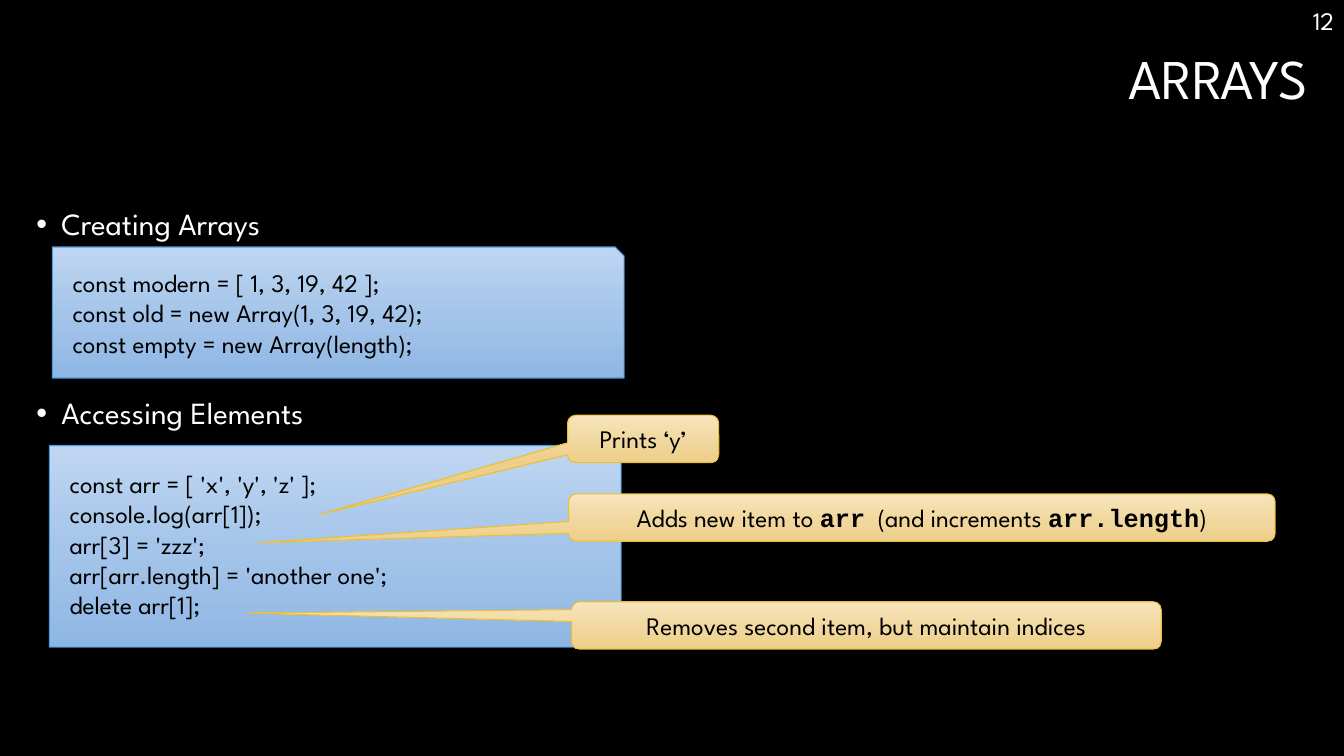
from copy import deepcopy
from typing import NamedTuple

from pptx import Presentation
from pptx.dml.color import RGBColor
from pptx.enum.shapes import MSO_SHAPE
from pptx.enum.text import MSO_ANCHOR, MSO_AUTO_SIZE, PP_ALIGN
from pptx.oxml.ns import qn
from pptx.util import Inches, Pt

SLIDE_WIDTH, SLIDE_HEIGHT = Inches(13.333), Inches(7.5)
TEXT_FONT, CODE_FONT = "League Spartan", "Courier New"

BLACK = RGBColor(0x00, 0x00, 0x00)
WHITE = RGBColor(0xFF, 0xFF, 0xFF)
BLUES = [RGBColor(0xBF, 0xD6, 0xF2), RGBColor(0xA4, 0xC4, 0xE9), RGBColor(0x8F, 0xB7, 0xE4)]
BLUE_LINE = RGBColor(0x4A, 0x9B, 0xDC)
GOLDS = [RGBColor(0xF8, 0xE5, 0xBD), RGBColor(0xF1, 0xD8, 0xA0), RGBColor(0xEE, 0xCF, 0x89)]
GOLD_LINE = RGBColor(0xE9, 0xBF, 0x35)


class Box(NamedTuple):
    """A region, in percent of the slide's width and height."""
    left: float
    top: float
    width: float
    height: float

    def lengths(self):
        return (int(SLIDE_WIDTH * self.left / 100), int(SLIDE_HEIGHT * self.top / 100),
                int(SLIDE_WIDTH * self.width / 100), int(SLIDE_HEIGHT * self.height / 100))


def place(shape, box):
    shape.left, shape.top, shape.width, shape.height = box.lengths()


def add_span(para, text, size, color, font=TEXT_FONT, bold=False):
    span = para.add_run()
    span.text = text
    span.font.name, span.font.size, span.font.bold = font, Pt(size), bold
    span.font.color.rgb = color


def add_panel(page, kind, box, colors, line_color):
    """Outlined shape with a three-step gradient from top to bottom."""
    panel = page.shapes.add_shape(kind, *box.lengths())
    panel.shadow.inherit = False
    panel.fill.gradient()
    panel.fill.gradient_angle = 270
    stop_list = next(panel._element.spPr.iter(qn("a:gsLst")))
    stop_list.insert(1, deepcopy(stop_list[0]))
    for stop, position, color in zip(panel.fill.gradient_stops, (0, 0.52, 1), colors):
        stop.position = position
        stop.color.rgb = color
    panel.line.color.rgb = line_color
    panel.line.width = Pt(0.75)
    panel.text_frame.word_wrap = True
    return panel


def add_title(page, box, text):
    title = page.shapes.title
    place(title, box)
    frame = title.text_frame
    frame.vertical_anchor = MSO_ANCHOR.TOP
    frame.auto_size = MSO_AUTO_SIZE.NONE
    para = frame.paragraphs[0]
    para.alignment, para.line_spacing = PP_ALIGN.RIGHT, 0.9
    add_span(para, text, 40, WHITE)


def add_topics(page, box, topics):
    """Bulleted headings, each with the space above it in points."""
    body = page.placeholders[1]
    place(body, box)
    frame = body.text_frame
    frame.auto_size = MSO_AUTO_SIZE.NONE
    for index, (text, space) in enumerate(topics):
        para = frame.add_paragraph() if index else frame.paragraphs[0]
        para.line_spacing, para.space_before = 0.9, Pt(space)
        properties = para._p.get_or_add_pPr()
        properties.set("marL", str(Inches(0.25)))
        properties.set("indent", str(-Inches(0.25)))
        add_span(para, text, 22, WHITE)


def add_page_number(page, box, number):
    para = page.shapes.add_textbox(*box.lengths()).text_frame.paragraphs[0]
    para._parent.word_wrap = True
    para.alignment = PP_ALIGN.RIGHT
    add_span(para, number, 18, WHITE)


def add_code(page, box, lines):
    panel = add_panel(page, MSO_SHAPE.SNIP_1_RECTANGLE, box, BLUES, BLUE_LINE)
    panel.adjustments[0] = 0.068
    frame = panel.text_frame
    frame.vertical_anchor = MSO_ANCHOR.TOP
    frame.margin_left = frame.margin_right = frame.margin_bottom = Inches(0.2)
    frame.margin_top = Inches(0.16)
    for index, line in enumerate(lines):
        para = frame.add_paragraph() if index else frame.paragraphs[0]
        para.alignment = PP_ALIGN.LEFT
        add_span(para, line, 18, BLACK)


def add_callout(page, box, tip, spans):
    """Note whose wedge ends at tip; spans are (text, is_code) pairs."""
    note = add_panel(page, MSO_SHAPE.ROUNDED_RECTANGULAR_CALLOUT, box, GOLDS, GOLD_LINE)
    note.adjustments[0] = (tip[0] - box.left) / box.width - 0.5
    note.adjustments[1] = (tip[1] - box.top) / box.height - 0.5
    note.adjustments[2] = 0.167
    note.text_frame.vertical_anchor = MSO_ANCHOR.MIDDLE
    para = note.text_frame.paragraphs[0]
    para.alignment = PP_ALIGN.CENTER
    for text, is_code in spans:
        add_span(para, text, 18, BLACK, CODE_FONT if is_code else TEXT_FONT, is_code)


def build_arrays_page(deck):
    page = deck.slides.add_slide(deck.slide_layouts[1])
    page.background.fill.solid()
    page.background.fill.fore_color.rgb = BLACK

    # Headings
    add_topics(page, Box(1.95, 26.93, 96.08, 70.4),
               [("Creating Arrays", 10), ("Accessing Elements", 111.3)])
    add_title(page, Box(1.95, 6.13, 96.08, 18.8), "ARRAYS")
    add_page_number(page, Box(78.4, 0, 21.6, 5.33), "12")

    # Code samples
    add_code(page, Box(3.9, 32.67, 42.53, 17.33), [
        "const modern = [ 1, 3, 19, 42 ];",
        "const old = new Array(1, 3, 19, 42);",
        "const empty = new Array(length);",
    ])
    add_code(page, Box(3.68, 58.93, 42.53, 26.67), [
        "const arr = [ 'x', 'y', 'z' ];",
        "console.log(arr[1]);",
        "arr[3] = 'zzz';",
        "arr[arr.length] = 'another one';",
        "delete arr[1];",
    ])

    # Notes on single lines of code
    add_callout(page, Box(42.23, 54.93, 11.25, 6.27), (23.73, 68.1), [("Prints ‘y’", False)])
    add_callout(page, Box(42.3, 65.33, 52.58, 6.27), (19.22, 71.79), [
        ("Adds new item to ", False), ("arr", True), ("  (and increments ", False),
        ("arr.length", True), (")", False),
    ])
    add_callout(page, Box(42.53, 79.6, 43.88, 6.27), (18.35, 81.11),
                [("Removes second item, but maintain indices", False)])


def main():
    deck = Presentation()
    deck.slide_width, deck.slide_height = SLIDE_WIDTH, SLIDE_HEIGHT
    build_arrays_page(deck)
    deck.save("out.pptx")


if __name__ == "__main__":
    main()
